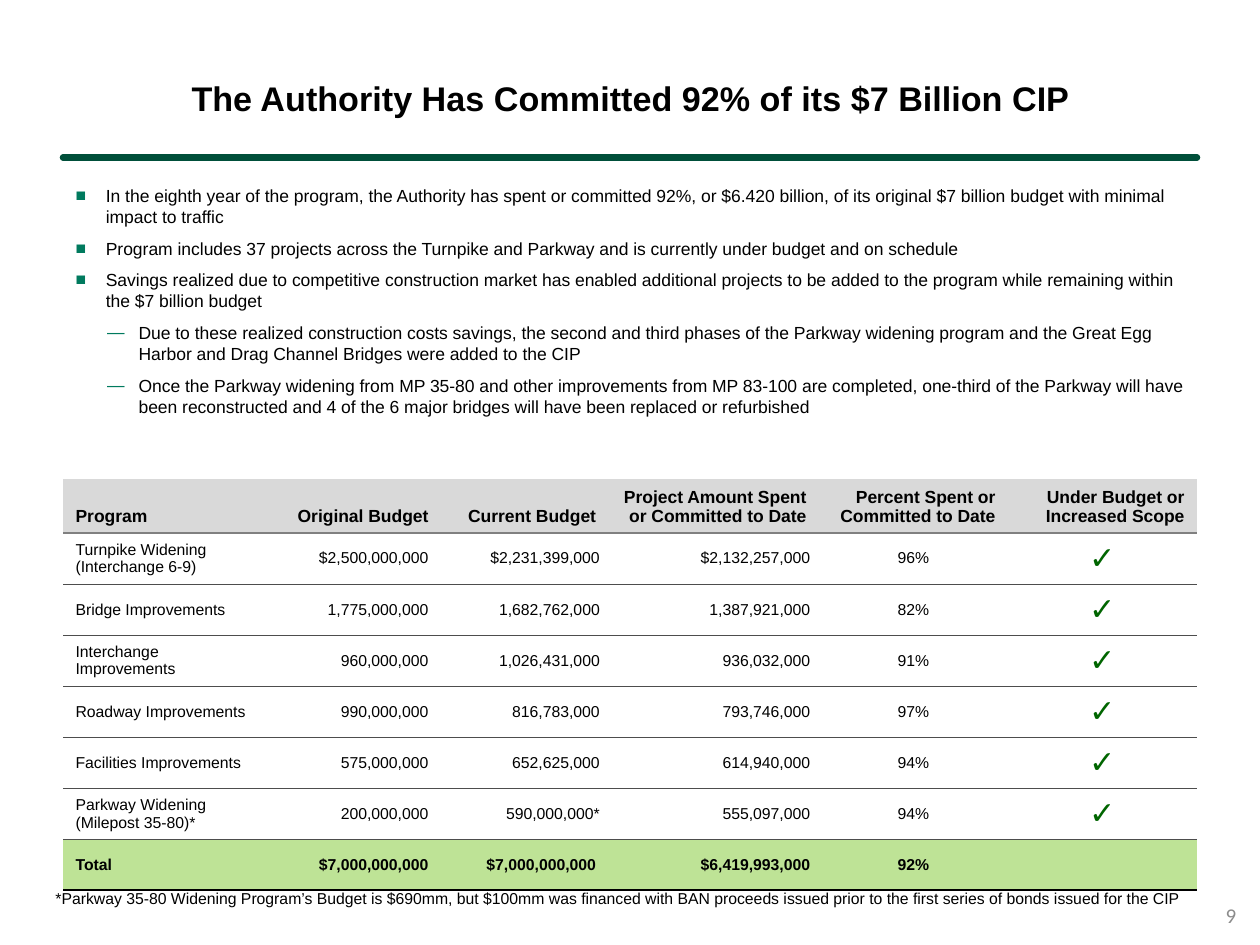
from lxml.etree import SubElement
from pptx import Presentation
from pptx.dml.color import RGBColor
from pptx.enum.shapes import MSO_CONNECTOR
from pptx.enum.text import MSO_ANCHOR, MSO_AUTO_SIZE, PP_ALIGN
from pptx.oxml import parse_xml
from pptx.oxml.ns import nsdecls, qn
from pptx.util import Inches, Pt


def set_font(paragraph, size, color="000000", bold=False, name="Arial"):
    font = paragraph.font
    font.name = name
    font.size = Pt(size)
    font.bold = bold
    font.color.rgb = RGBColor.from_string(color)


def set_borders(cell, top, bottom):
    properties = cell._tc.get_or_add_tcPr()
    borders = [("lnL", None), ("lnR", None), ("lnT", top), ("lnB", bottom)]
    for position, (tag, border) in enumerate(borders):
        if border:
            color, width = border
            paint = f'<a:solidFill><a:srgbClr val="{color}"/></a:solidFill>'
        else:
            width, paint = 0, "<a:noFill/>"
        line = parse_xml(f'<a:{tag} {nsdecls("a")} w="{int(Pt(width))}">{paint}</a:{tag}>')
        properties.insert(position, line)


presentation = Presentation()
presentation.slide_width = Inches(10)
presentation.slide_height = Inches(7.5)
slide = presentation.slides.add_slide(presentation.slide_layouts[1])

rule = slide.shapes.add_connector(
    MSO_CONNECTOR.STRAIGHT, Inches(0.5), Inches(1.25), Inches(9.5), Inches(1.25))
rule.line.color.rgb = RGBColor.from_string("004F3A")
rule.line.width = Pt(3.75)
rule.line._get_or_add_ln().set("cap", "rnd")
SubElement(rule._element.spPr, qn("a:effectLst"))

title = slide.shapes.title
title.left, title.top, title.width, title.height = (
    Inches(1.42), Inches(0.3), Inches(8.58), Inches(0.95))
title.text_frame.text = "The Authority Has Committed 92% of its $7 Billion CIP"
title.text_frame.auto_size = MSO_AUTO_SIZE.NONE
title.text_frame.vertical_anchor = MSO_ANCHOR.MIDDLE
title.text_frame.paragraphs[0].alignment = PP_ALIGN.LEFT
set_font(title.text_frame.paragraphs[0], 19.5, bold=True)

body = slide.placeholders[1]
body.left, body.top, body.width, body.height = (
    Inches(0.5), Inches(1.42), Inches(9), Inches(2.25))
body.text_frame.auto_size = MSO_AUTO_SIZE.NONE
bullets = [
    (0, "In the eighth year of the program, the Authority has spent or committed 92%, or $6.420 billion, of its original $7 billion budget with minimal impact to traffic"),
    (0, "Program includes 37 projects across the Turnpike and Parkway and is currently under budget and on schedule"),
    (0, "Savings realized due to competitive construction market has enabled additional projects to be added to the program while remaining within the $7 billion budget"),
    (1, "Due to these realized construction costs savings, the second and third phases of the Parkway widening program and the Great Egg Harbor and Drag Channel Bridges were added to the CIP"),
    (1, "Once the Parkway widening from MP 35-80 and other improvements from MP 83-100 are completed, one-third of the Parkway will have been reconstructed and 4 of the 6 major bridges will have been replaced or refurbished"),
]
bullet_styles = [("■", 0.24, 0.24), ("—", 0.5, 0.25)]
for index, (level, text) in enumerate(bullets):
    paragraph = body.text_frame.paragraphs[0] if index == 0 else body.text_frame.add_paragraph()
    paragraph.text = text
    paragraph.level = level
    paragraph.space_before = Pt(3 if index else 0)
    paragraph.space_after = Pt(3)
    mark, margin, hanging = bullet_styles[level]
    properties = paragraph._p.get_or_add_pPr()
    properties.set("marL", str(int(Inches(margin))))
    properties.set("indent", str(-int(Inches(hanging))))
    bullet_color = SubElement(properties, qn("a:buClr"))
    SubElement(bullet_color, qn("a:srgbClr")).set("val", "007A5E")
    SubElement(properties, qn("a:buFont")).set("typeface", "Arial")
    SubElement(properties, qn("a:buChar")).set("char", mark)
    set_font(paragraph, 10)

rows = [
    ["Program", "Original Budget", "Current Budget", "Project Amount Spent or Committed to Date",
     "Percent Spent or Committed to Date", "Under Budget or Increased Scope"],
    ["Turnpike Widening (Interchange 6-9)", "$2,500,000,000", "$2,231,399,000", "$2,132,257,000", "96%", "✓"],
    ["Bridge Improvements", "1,775,000,000", "1,682,762,000", "1,387,921,000", "82%", "✓"],
    ["Interchange Improvements", "960,000,000", "1,026,431,000", "936,032,000", "91%", "✓"],
    ["Roadway Improvements", "990,000,000", "816,783,000", "793,746,000", "97%", "✓"],
    ["Facilities Improvements", "575,000,000", "652,625,000", "614,940,000", "94%", "✓"],
    ["Parkway Widening (Milepost 35-80)*", "200,000,000", "590,000,000*", "555,097,000", "94%", "✓"],
    ["Total", "$7,000,000,000", "$7,000,000,000", "$6,419,993,000", "92%", ""],
]
column_widths = [1.67, 1.33, 1.33, 1.67, 1.5, 1.5]
header_line, inner_line, total_line = ("808080", 1), ("4D4D4D", 0.5), ("000000", 1)
row_lines = [None, header_line] + [inner_line] * 6 + [total_line]
row_fills = {0: "D9D9D9", 7: "BEE396"}
total_row = len(rows) - 1

table = slide.shapes.add_table(
    len(rows), len(column_widths), Inches(0.5), Inches(3.8), Inches(9), Inches(3.23)).table
table.first_row = False
table.horz_banding = False
for column, width in zip(table.columns, column_widths):
    column.width = Inches(width)

for r, values in enumerate(rows):
    table.rows[r].height = Inches(0.4 if r else 0.43)
    for c, value in enumerate(values):
        cell = table.cell(r, c)
        cell.text = value
        cell.vertical_anchor = MSO_ANCHOR.MIDDLE if r else MSO_ANCHOR.BOTTOM
        paragraph = cell.text_frame.paragraphs[0]
        if c == 0:
            paragraph.alignment = PP_ALIGN.LEFT
        elif r and c >= 4:
            paragraph.alignment = PP_ALIGN.CENTER
        else:
            paragraph.alignment = PP_ALIGN.RIGHT
        if r and (c == 3 or c == 2 and r < total_row):
            cell.margin_left = cell.margin_right = Inches(0.07)
            cell.margin_top = cell.margin_bottom = 0
        if value == "✓":
            cell.vertical_anchor = MSO_ANCHOR.TOP
            set_font(paragraph, 18, "006500", True, "Calibri")
        else:
            set_font(paragraph, 9 if r else 10, bold=r in row_fills)
        if r in row_fills:
            cell.fill.solid()
            cell.fill.fore_color.rgb = RGBColor.from_string(row_fills[r])
        else:
            cell.fill.background()
        set_borders(cell, row_lines[r], row_lines[r + 1])

footnote = slide.shapes.add_textbox(Inches(0.44), Inches(7.01), Inches(9.06), Inches(0.24))
frame = footnote.text_frame
frame.word_wrap = True
frame.margin_left = frame.margin_right = 0
frame.margin_top = frame.margin_bottom = Inches(0.04)
frame.text = "*Parkway 35-80 Widening Program’s Budget is $690mm, but $100mm was financed with BAN proceeds issued prior to the first series of bonds issued for the CIP"
set_font(frame.paragraphs[0], 9)

page_number = slide.shapes.add_textbox(Inches(7.58), Inches(7.06), Inches(2.33), Inches(0.4))
page_number.text_frame.word_wrap = True
page_number.text_frame.vertical_anchor = MSO_ANCHOR.MIDDLE
page_number.text_frame.text = "9"
page_number.text_frame.paragraphs[0].alignment = PP_ALIGN.RIGHT
set_font(page_number.text_frame.paragraphs[0], 12, "8C8C8C", name="Calibri")

presentation.save("out.pptx")
